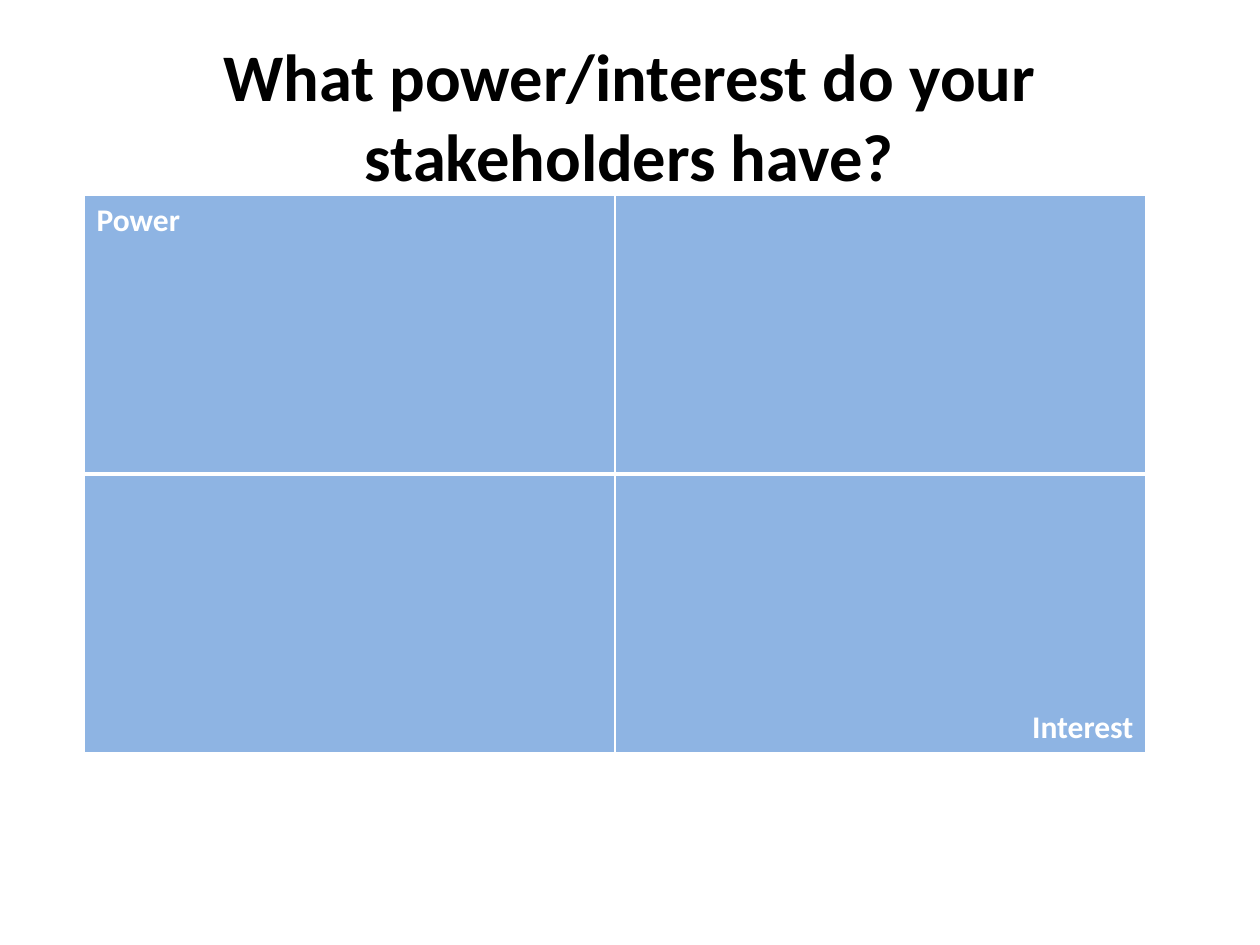
"""Build a slide with a power/interest grid for stakeholders."""
from pptx import Presentation
from pptx.dml.color import RGBColor
from pptx.enum.text import MSO_ANCHOR, MSO_AUTO_SIZE, PP_ALIGN
from pptx.oxml import parse_xml
from pptx.oxml.ns import nsdecls
from pptx.util import Emu, Pt

PX_PER_INCH = 126
FONT = "Calibri"
BLACK = RGBColor(0x00, 0x00, 0x00)
WHITE = RGBColor(0xFF, 0xFF, 0xFF)
LIGHT_BLUE = RGBColor(0x8E, 0xB4, 0xE3)


def px(length):
    """Turn pixels into EMU."""
    return Emu(round(length * 914400 / PX_PER_INCH))


def write_text(text_frame, text, size, color, alignment):
    """Write one bold paragraph."""
    text_frame.text = text
    paragraph = text_frame.paragraphs[0]
    paragraph.alignment = alignment
    paragraph.font.name = FONT
    paragraph.font.size = Pt(size)
    paragraph.font.bold = True
    paragraph.font.color.rgb = color


def add_title(slide, text):
    """Place and fill the title placeholder."""
    title = slide.shapes.title
    title.left, title.top, title.width, title.height = map(px, (94, 45, 1071, 139))
    text_frame = title.text_frame
    text_frame.word_wrap = True
    text_frame.auto_size = MSO_AUTO_SIZE.NONE
    text_frame.vertical_anchor = MSO_ANCHOR.MIDDLE
    write_text(text_frame, text, 38, BLACK, PP_ALIGN.CENTER)


def set_borders(cell, widths, color):
    """Draw the cell borders, given as widths in points by side."""
    properties = cell._tc.get_or_add_tcPr()
    for index, side in enumerate("LRTB"):
        border = parse_xml(
            f'<a:ln{side} {nsdecls("a")} w="{Pt(widths[side])}">'
            f'<a:solidFill><a:srgbClr val="{color}"/></a:solidFill></a:ln{side}>'
        )
        properties.insert(index, border)


def add_grid(slide):
    """Add the two by two table of plain cells with a thick middle line."""
    frame = slide.shapes.add_table(2, 2, px(84), px(195), px(1062), px(558))
    table = frame.table
    table.first_row = False
    table.horz_banding = False
    for row_index, row in enumerate(table.rows):
        for cell in row.cells:
            cell.fill.solid()
            cell.fill.fore_color.rgb = LIGHT_BLUE
            top, bottom = (1, 3) if row_index == 0 else (3, 1)
            set_borders(cell, {"L": 1, "R": 1, "T": top, "B": bottom}, WHITE)
    return table


def label_cell(cell, text, alignment, anchor):
    """Write an axis name into a corner of the grid."""
    cell.vertical_anchor = anchor
    write_text(cell.text_frame, text, 18, WHITE, alignment)


def main():
    """Build and save the presentation."""
    presentation = Presentation()
    presentation.slide_width = px(1260)
    presentation.slide_height = px(945)
    slide = presentation.slides.add_slide(presentation.slide_layouts[5])
    add_title(slide, "What power/interest do your stakeholders have?")
    table = add_grid(slide)
    label_cell(table.cell(0, 0), "Power", PP_ALIGN.LEFT, MSO_ANCHOR.TOP)
    label_cell(table.cell(1, 1), "Interest", PP_ALIGN.RIGHT, MSO_ANCHOR.BOTTOM)
    presentation.save("out.pptx")


if __name__ == "__main__":
    main()
